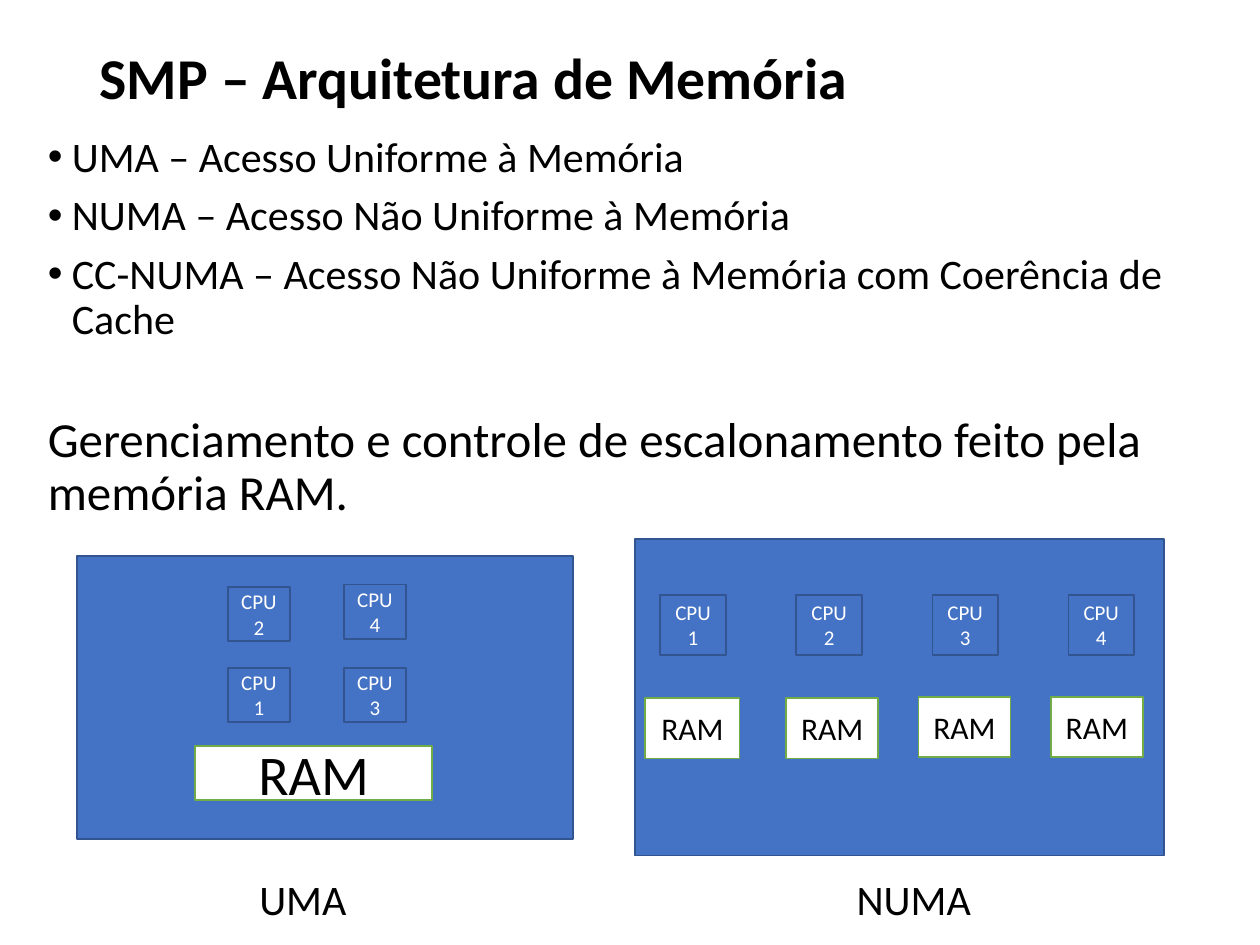
from dataclasses import dataclass

from pptx import Presentation
from pptx.dml.color import RGBColor
from pptx.enum.shapes import MSO_SHAPE
from pptx.enum.text import MSO_ANCHOR, MSO_AUTO_SIZE, PP_ALIGN
from pptx.shapes.shapetree import GroupShapes, SlideShapes
from pptx.slide import Slide
from pptx.text.text import Font
from pptx.util import Inches, Pt

RECTANGLE = MSO_SHAPE.RECTANGLE
MIDDLE, TOP = MSO_ANCHOR.MIDDLE, MSO_ANCHOR.TOP
LEFT, CENTER = PP_ALIGN.LEFT, PP_ALIGN.CENTER
NO_FIT, GROW = MSO_AUTO_SIZE.NONE, MSO_AUTO_SIZE.SHAPE_TO_FIT_TEXT


@dataclass(frozen=True)
class Theme:
    font: str = "Calibri"
    black: RGBColor = RGBColor(0x00, 0x00, 0x00)
    white: RGBColor = RGBColor(0xFF, 0xFF, 0xFF)
    blue: RGBColor = RGBColor(0x44, 0x72, 0xC4)
    dark_blue: RGBColor = RGBColor(0x32, 0x54, 0x91)
    green: RGBColor = RGBColor(0x70, 0xAD, 0x47)
    title_size: int = 33
    list_size: int = 24
    remark_size: int = 28
    cpu_size: int = 12
    shared_ram_size: int = 32
    local_ram_size: int = 18


@dataclass(frozen=True)
class Area:
    left: float
    top: float
    width: float
    height: float


@dataclass(frozen=True)
class BoxStyle:
    fill: RGBColor
    line: RGBColor
    text: RGBColor
    size: int


THEME = Theme()
CPU = BoxStyle(THEME.blue, THEME.dark_blue, THEME.white, THEME.cpu_size)
SHARED_RAM = BoxStyle(THEME.white, THEME.green, THEME.black, THEME.shared_ram_size)
LOCAL_RAM = BoxStyle(THEME.white, THEME.green, THEME.black, THEME.local_ram_size)

TITLE = "SMP – Arquitetura de Memória"
ARCHITECTURES = (
    "UMA – Acesso Uniforme à Memória",
    "NUMA – Acesso Não Uniforme à Memória",
    "CC-NUMA – Acesso Não Uniforme à Memória com Coerência de Cache",
)
REMARK = "Gerenciamento e controle de escalonamento feito pela memória RAM."

UMA_CPUS = {
    "CPU1": Area(1.81, 5.3, 0.49, 0.43),
    "CPU2": Area(1.81, 4.66, 0.49, 0.43),
    "CPU3": Area(2.73, 5.3, 0.49, 0.43),
    "CPU4": Area(2.73, 4.64, 0.49, 0.43),
}
NUMA_RAMS = (
    Area(5.12, 5.54, 0.75, 0.48),
    Area(6.24, 5.54, 0.73, 0.48),
    Area(7.29, 5.53, 0.73, 0.48),
    Area(8.34, 5.53, 0.73, 0.48),
)


def set_font(font: Font, size: int, color: RGBColor, bold: bool = False) -> None:
    font.name = THEME.font
    font.size = Pt(size)
    font.color.rgb = color
    font.bold = bold


def place(shape, area: Area) -> None:
    shape.left, shape.top = Inches(area.left), Inches(area.top)
    shape.width, shape.height = Inches(area.width), Inches(area.height)


def fill_title(page: Slide) -> None:
    title = page.shapes.title
    place(title, Area(0.69, 0.23, 8.62, 0.83))
    frame = title.text_frame
    frame.text = TITLE
    frame.auto_size = NO_FIT
    frame.vertical_anchor = MIDDLE
    para = frame.paragraphs[0]
    para.alignment = LEFT
    para.line_spacing = 0.9
    set_font(para.font, THEME.title_size, THEME.black, bold=True)


def fill_body(page: Slide) -> None:
    body = page.placeholders[1]
    place(body, Area(0.28, 1.03, 9.37, 5.21))
    frame = body.text_frame
    frame.text = "\n".join((*ARCHITECTURES, REMARK))
    frame.auto_size = NO_FIT
    frame.vertical_anchor = TOP
    for para in frame.paragraphs:
        para.line_spacing = 0.9
        para.space_before = Pt(7.5)
        set_font(para.font, THEME.list_size, THEME.black)
        properties = para._p.get_or_add_pPr()
        properties.set("marL", str(Inches(0.19)))
        properties.set("indent", str(-Inches(0.19)))

    remark = frame.paragraphs[-1]
    remark.space_before = Pt(41)
    remark.font.size = Pt(THEME.remark_size)
    properties = remark._p.get_or_add_pPr()
    properties.set("marL", "0")
    properties.set("indent", "0")
    no_bullet = properties.makeelement(
        "{http://schemas.openxmlformats.org/drawingml/2006/main}buNone", {}
    )
    properties.find("{*}defRPr").addprevious(no_bullet)


def add_box(shapes: GroupShapes, area: Area, style: BoxStyle, text: str = "") -> None:
    box = shapes.add_shape(
        RECTANGLE, Inches(area.left), Inches(area.top), Inches(area.width), Inches(area.height)
    )
    box.shadow.inherit = False
    box.fill.solid()
    box.fill.fore_color.rgb = style.fill
    box.line.color.rgb = style.line
    box.line.width = Pt(1)
    if text:
        frame = box.text_frame
        frame.text = text
        frame.word_wrap = True
        frame.vertical_anchor = MIDDLE
        para = frame.paragraphs[0]
        para.alignment = CENTER
        set_font(para.font, style.size, style.text)


def add_caption(shapes: SlideShapes, area: Area, text: str) -> None:
    caption = shapes.add_textbox(
        Inches(area.left), Inches(area.top), Inches(area.width), Inches(area.height)
    )
    frame = caption.text_frame
    frame.text = text
    frame.word_wrap = False
    frame.auto_size = GROW
    set_font(frame.paragraphs[0].font, THEME.list_size, THEME.black)


def draw_uma(page: Slide) -> None:
    diagram = page.shapes.add_group_shape().shapes
    add_box(diagram, Area(0.61, 4.41, 3.94, 2.25), CPU)
    for name, area in UMA_CPUS.items():
        add_box(diagram, area, CPU, name)
    add_box(diagram, Area(1.55, 5.92, 1.88, 0.43), SHARED_RAM, "RAM")
    add_caption(page.shapes, Area(1.96, 6.88, 0.9, 0.5), "UMA")


def draw_numa(page: Slide) -> None:
    diagram = page.shapes.add_group_shape().shapes
    add_box(diagram, Area(5.04, 4.28, 4.2, 2.51), CPU)
    for index, ram in enumerate(NUMA_RAMS):
        add_box(diagram, Area(5.24 + 1.08 * index, 4.72, 0.52, 0.48), CPU, f"CPU{index + 1}")
        add_box(diagram, ram, LOCAL_RAM, "RAM")
    add_caption(page.shapes, Area(6.7, 6.88, 1.12, 0.5), "NUMA")


def main() -> None:
    deck = Presentation()
    deck.slide_width, deck.slide_height = Inches(10), Inches(7.5)
    page = deck.slides.add_slide(deck.slide_layouts[1])
    fill_title(page)
    fill_body(page)
    draw_uma(page)
    draw_numa(page)
    deck.save("out.pptx")


if __name__ == "__main__":
    main()
